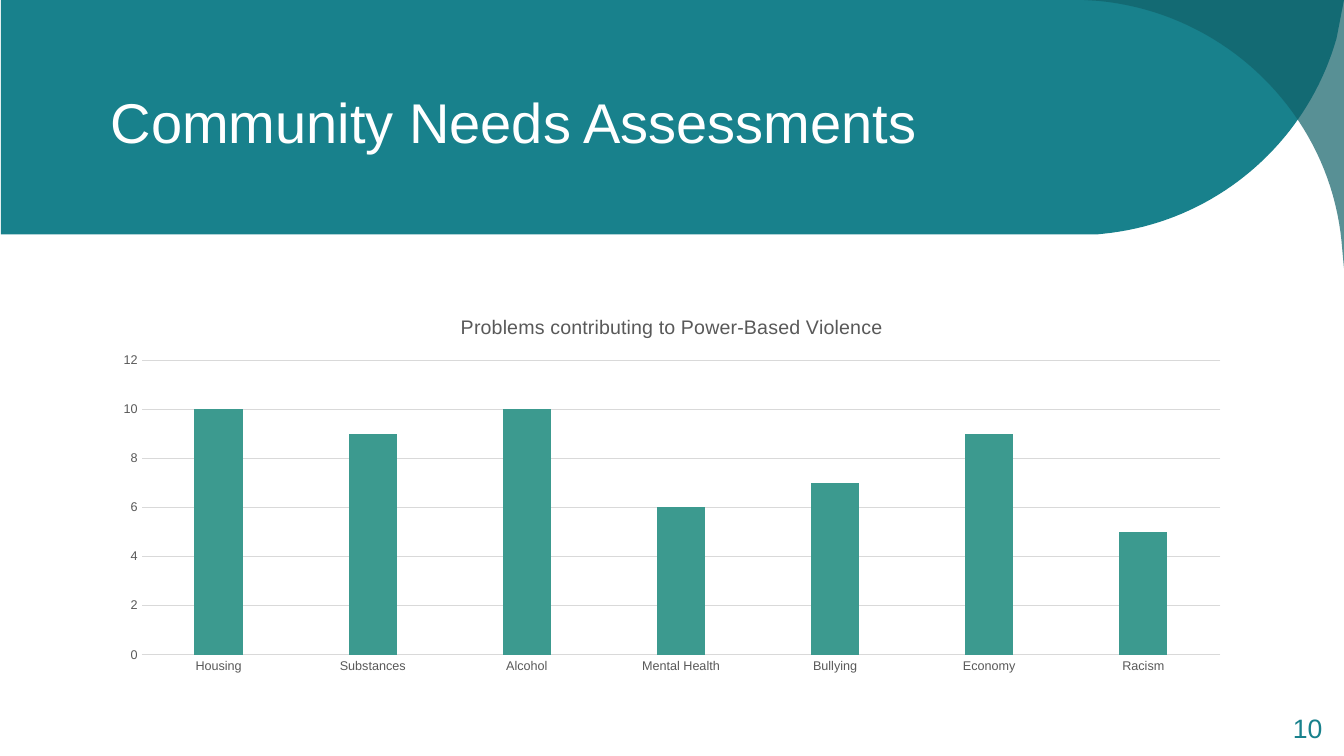
from dataclasses import dataclass

import pptx
import pptx.chart.data
import pptx.dml.color
import pptx.enum.chart
import pptx.enum.text
import pptx.oxml
import pptx.oxml.ns
import pptx.util
from lxml import etree

Pt = pptx.util.Pt
Point = tuple[float, float]
FONT = "Arial"
TEAL, DARK_TEAL, GREEN = "18818C", "126169", "3C9A8F"
WHITE, GREY, LIGHT_GREY = "FFFFFF", "595959", "D9D9D9"
CURVE_STEPS = 40


@dataclass(frozen=True)
class Swoosh:
    """Straight corners followed by one Bezier curve from the last corner."""
    corners: list[Point]
    controls: tuple[Point, Point]
    curve_end: Point
    color: str
    opacity: int = 100


SWOOSHES = [
    Swoosh([(960, 0), (0.7, 0), (0.7, 167.5), (783, 167.5), (787.7, 167)],
           ((867.6, 159.1), (933.1, 103)), (954.7, 27.4), TEAL),
    Swoosh([(774, 0), (960, 0), (960, 191.5), (958.3, 172.8)],
           ((949.7, 82.1), (876.2, 9.4)), (784.8, 0.7), DARK_TEAL, 70),
]

PROBLEMS = {
    "Housing": 10, "Substances": 9, "Alcohol": 10, "Mental Health": 6,
    "Bullying": 7, "Economy": 9, "Racism": 5,
}


def rgb(color: str) -> pptx.dml.color.RGBColor:
    return pptx.dml.color.RGBColor.from_string(color)


def style_font(font, size: float, color: str) -> None:
    font.name, font.size, font.bold = FONT, Pt(size), False
    font.color.rgb = rgb(color)


def bezier(start: Point, controls: tuple[Point, Point], end: Point) -> list[Point]:
    points = []
    for step in range(1, CURVE_STEPS + 1):
        t = step / CURVE_STEPS
        weights = ((1 - t) ** 3, 3 * t * (1 - t) ** 2, 3 * t * t * (1 - t), t ** 3)
        knots = (start, *controls, end)
        points.append((sum(w * x for w, (x, _) in zip(weights, knots)),
                       sum(w * y for w, (_, y) in zip(weights, knots))))
    return points


def draw_swoosh(page, swoosh: Swoosh) -> None:
    outline = swoosh.corners + bezier(swoosh.corners[-1], swoosh.controls, swoosh.curve_end)
    points = [(Pt(x), Pt(y)) for x, y in outline]
    builder = page.shapes.build_freeform(*points[0])
    builder.add_line_segments(points[1:], close=True)
    shape = builder.convert_to_shape()
    shape.shadow.inherit = False
    shape.line.fill.background()
    shape.fill.solid()
    shape.fill.fore_color.rgb = rgb(swoosh.color)
    if swoosh.opacity < 100:
        color = shape.element.find(".//" + pptx.oxml.ns.qn("a:srgbClr"))
        etree.SubElement(color, pptx.oxml.ns.qn("a:alpha"), val=str(swoosh.opacity * 1000))


def place_title(page, text: str) -> None:
    title = page.shapes.title
    title.left, title.top, title.width, title.height = Pt(72), Pt(35.3), Pt(780.5), Pt(102.2)
    frame = title.text_frame
    frame.text = text
    frame.vertical_anchor = pptx.enum.text.MSO_ANCHOR.MIDDLE
    para = frame.paragraphs[0]
    para.alignment = pptx.enum.text.PP_ALIGN.LEFT
    style_font(para.runs[0].font, 40, WHITE)
    page.shapes.element.append(title.element)  # bring in front of the band


def add_page_number(page, text: str) -> None:
    box = page.shapes.add_textbox(Pt(897), Pt(507), Pt(54.7), Pt(28.8))
    frame = box.text_frame
    frame.word_wrap = True
    frame.vertical_anchor = pptx.enum.text.MSO_ANCHOR.MIDDLE
    frame.text = text
    para = frame.paragraphs[0]
    para.alignment = pptx.enum.text.PP_ALIGN.RIGHT
    para.line_spacing, para.space_after = 0.9, Pt(6)
    style_font(para.runs[0].font, 19, TEAL)


def add_problem_chart(page, heading: str) -> None:
    data = pptx.chart.data.CategoryChartData()
    data.categories = list(PROBLEMS)
    data.add_series("Series 1", list(PROBLEMS.values()))
    chart = page.shapes.add_chart(
        pptx.enum.chart.XL_CHART_TYPE.COLUMN_CLUSTERED,
        Pt(72), Pt(213), Pt(816), Pt(273.6), data).chart
    style_font(chart.font, 10, "000000")
    chart.has_legend = False
    chart.has_title = True
    chart.chart_title.include_in_layout = False
    frame = chart.chart_title.text_frame
    frame.text = heading
    style_font(frame.paragraphs[0].runs[0].font, 14, GREY)

    # Columns
    plot = chart.plots[0]
    plot.gap_width, plot.overlap, plot.vary_by_categories = 219, -27, False
    columns = plot.series[0].format
    columns.fill.solid()
    columns.fill.fore_color.rgb = rgb(GREEN)

    # Axes
    for axis in (chart.category_axis, chart.value_axis):
        axis.major_tick_mark = axis.minor_tick_mark = pptx.enum.chart.XL_TICK_MARK.NONE
        style_font(axis.tick_labels.font, 9, GREY)
    value_axis = chart.value_axis
    value_axis.minimum_scale, value_axis.maximum_scale, value_axis.major_unit = 0, 12, 2
    value_axis.has_major_gridlines = True
    value_axis.format.line.fill.background()
    for line in (chart.category_axis.format.line, value_axis.major_gridlines.format.line):
        line.color.rgb = rgb(LIGHT_GREY)
        line.width = Pt(0.75)


def main() -> None:
    deck = pptx.Presentation()
    deck.slide_width, deck.slide_height = Pt(960), Pt(540)
    page = deck.slides.add_slide(deck.slide_layouts[5])

    # Header band
    for swoosh in SWOOSHES:
        draw_swoosh(page, swoosh)
    place_title(page, "Community Needs Assessments")

    # Body and footer
    add_page_number(page, "10")
    add_problem_chart(page, "Problems contributing to Power-Based Violence")
    deck.save("out.pptx")


if __name__ == "__main__":
    main()
